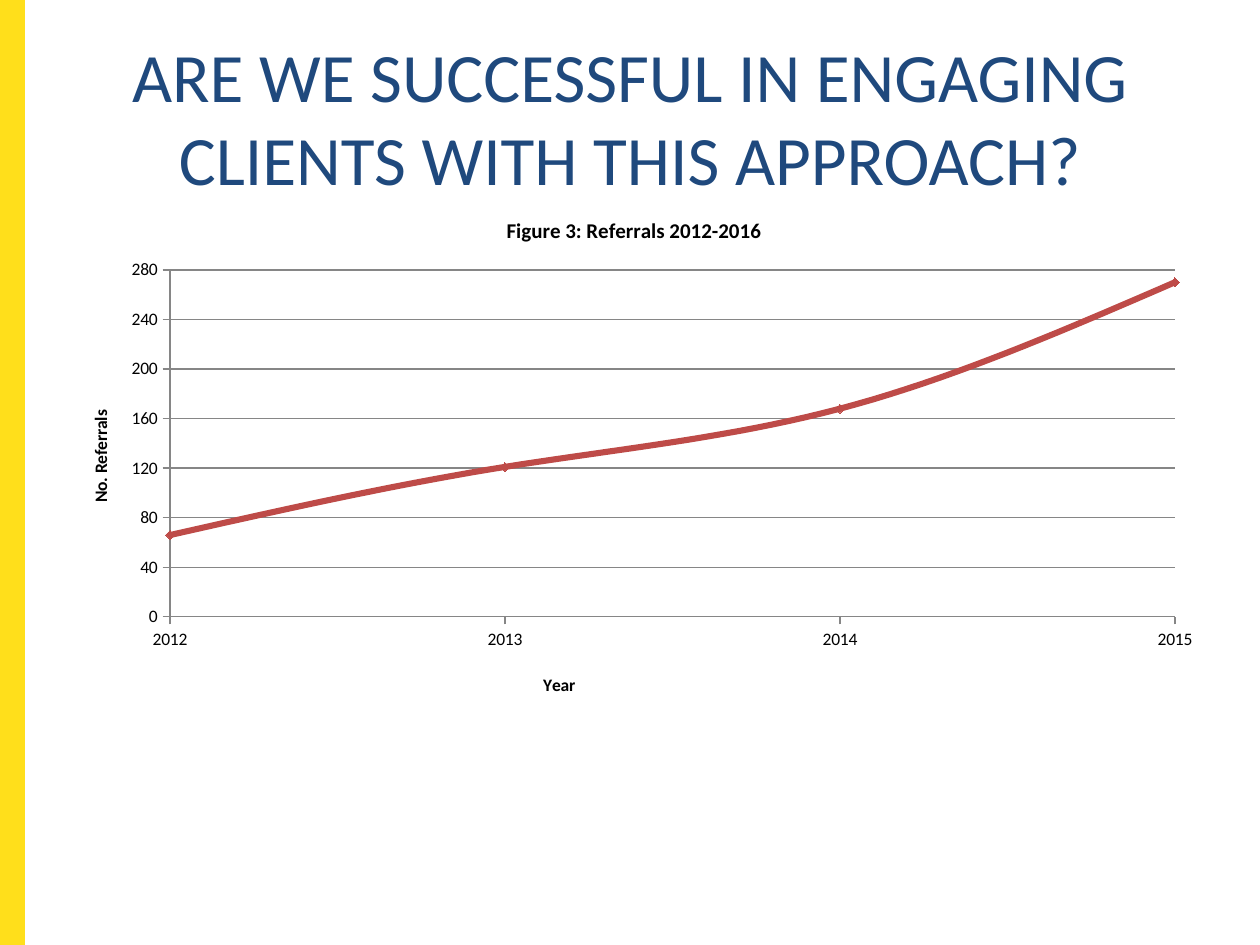
from lxml import etree
from pptx import Presentation
from pptx.chart.data import XyChartData
from pptx.dml.color import RGBColor
from pptx.enum.chart import XL_CHART_TYPE, XL_MARKER_STYLE, XL_TICK_MARK
from pptx.enum.shapes import MSO_SHAPE
from pptx.enum.text import MSO_ANCHOR, MSO_AUTO_SIZE, PP_ALIGN
from pptx.oxml.ns import qn
from pptx.util import Pt

SCATTER = XL_CHART_TYPE.XY_SCATTER_SMOOTH
DIAMOND = XL_MARKER_STYLE.DIAMOND
TICK_OUT, TICK_NONE = XL_TICK_MARK.OUTSIDE, XL_TICK_MARK.NONE
RECTANGLE = MSO_SHAPE.RECTANGLE
MIDDLE, CENTER = MSO_ANCHOR.MIDDLE, PP_ALIGN.CENTER
NO_AUTOFIT = MSO_AUTO_SIZE.NONE

# Content
HEADING = "ARE WE SUCCESSFUL IN ENGAGING CLIENTS WITH THIS APPROACH?"
CHART_TITLE = "Figure 3: Referrals 2012-2016"
YEAR_TITLE, REFERRALS_TITLE = "Year", "No. Referrals"
REFERRALS = [(2012, 66), (2013, 121), (2014, 168), (2015, 270)]

# Style
FONT = "Calibri"
NAVY = RGBColor(0x1F, 0x49, 0x7D)
YELLOW = RGBColor(0xFF, 0xDF, 0x1B)
RED = RGBColor(0xBE, 0x4B, 0x48)
GREY = RGBColor(0x86, 0x86, 0x86)
BLACK = RGBColor(0, 0, 0)

# Geometry in px
EMU_PER_PX = 914400 // 126
SLIDE_SIZE = (1260, 945)
BAR_BOX = (0, 0, 25, 945)
HEADING_BOX = (63, 38, 1134, 157)
CHART_BOX = (54, 195, 1160, 536)
PLOT_BOX = (170, 270, 1005, 347)
YEAR_POINT = (540, 670)
REFERRALS_POINT = (86, 407)


def emu(box):
    return [value * EMU_PER_PX for value in box]


def style_font(font, size, color, bold=False):
    font.name, font.size, font.bold = FONT, Pt(size), bold
    font.color.rgb = color


def set_layout(parent, index, box, inner=False):
    """Place a chart part by fractions of the chart frame."""
    for old in parent.findall(qn("c:layout")):
        parent.remove(old)
    layout = etree.Element(qn("c:layout"))
    manual = etree.SubElement(layout, qn("c:manualLayout"))
    left, top, width, height = CHART_BOX
    fractions = [(box[0] - left) / width, (box[1] - top) / height]
    fractions += [size / whole for size, whole in zip(box[2:], (width, height))]
    settings = [("layoutTarget", "inner")] if inner else []
    settings += [("xMode", "edge"), ("yMode", "edge")]
    settings += [(name, f"{part:.4f}") for name, part in zip("xywh", fractions)]
    for name, value in settings:
        etree.SubElement(manual, qn(f"c:{name}")).set("val", value)
    parent.insert(index, layout)


def add_title(owner, text, size):
    frame = owner.text_frame
    run = frame.paragraphs[0].add_run()
    run.text = text
    style_font(run.font, size, BLACK, bold=True)


def format_axis(axis, title, low, high, step, point):
    axis.minimum_scale, axis.maximum_scale, axis.major_unit = low, high, step
    axis.major_tick_mark, axis.minor_tick_mark = TICK_OUT, TICK_NONE
    axis.tick_labels.number_format = "General"
    axis.tick_labels.number_format_is_linked = False
    style_font(axis.tick_labels.font, 10, BLACK)
    axis.format.line.color.rgb = GREY
    axis.format.line.width = Pt(0.75)
    add_title(axis.axis_title, title, 10)
    set_layout(axis.axis_title._element, 1, point)


deck = Presentation()
deck.slide_width, deck.slide_height = emu(SLIDE_SIZE)
page = deck.slides.add_slide(deck.slide_layouts[5])

# Side bar
bar = page.shapes.add_shape(RECTANGLE, *emu(BAR_BOX))
bar.shadow.inherit = False
bar.fill.solid()
bar.fill.fore_color.rgb = YELLOW
bar.line.fill.background()

# Heading
heading = page.shapes.title
heading.left, heading.top, heading.width, heading.height = emu(HEADING_BOX)
frame = heading.text_frame
frame.word_wrap, frame.auto_size = True, NO_AUTOFIT
frame.vertical_anchor = MIDDLE
para = frame.paragraphs[0]
para.alignment = CENTER
run = para.add_run()
run.text = HEADING
style_font(run.font, 39.6, NAVY)

# Referrals chart
data = XyChartData()
points = data.add_series("Series 1")
for year, count in REFERRALS:
    points.add_data_point(year, count)
chart = page.shapes.add_chart(SCATTER, *emu(CHART_BOX), data).chart
style_font(chart.font, 10, BLACK)
chart.has_legend = False
chart.has_title = True
add_title(chart.chart_title, CHART_TITLE, 12)
chart.plots[0].vary_by_categories = False
plot_area = chart._chartSpace.chart.plotArea
set_layout(plot_area, 0, PLOT_BOX, inner=True)

# Axes
years, counts = chart.category_axis, chart.value_axis
format_axis(years, YEAR_TITLE, 2012, 2015, 1, YEAR_POINT)
format_axis(counts, REFERRALS_TITLE, 0, 280, 40, REFERRALS_POINT)
years.has_major_gridlines = False
counts.has_major_gridlines = True
counts.major_gridlines.format.line.color.rgb = GREY
counts.major_gridlines.format.line.width = Pt(0.75)

# Curve
curve = chart.plots[0].series[0]
curve.format.line.color.rgb = RED
curve.format.line.width = Pt(3.5)
curve.marker.style, curve.marker.size = DIAMOND, 5
curve.marker.format.fill.solid()
curve.marker.format.fill.fore_color.rgb = RED
curve.marker.format.line.color.rgb = RED
curve._element.get_or_add_smooth().val = True

deck.save("out.pptx")
